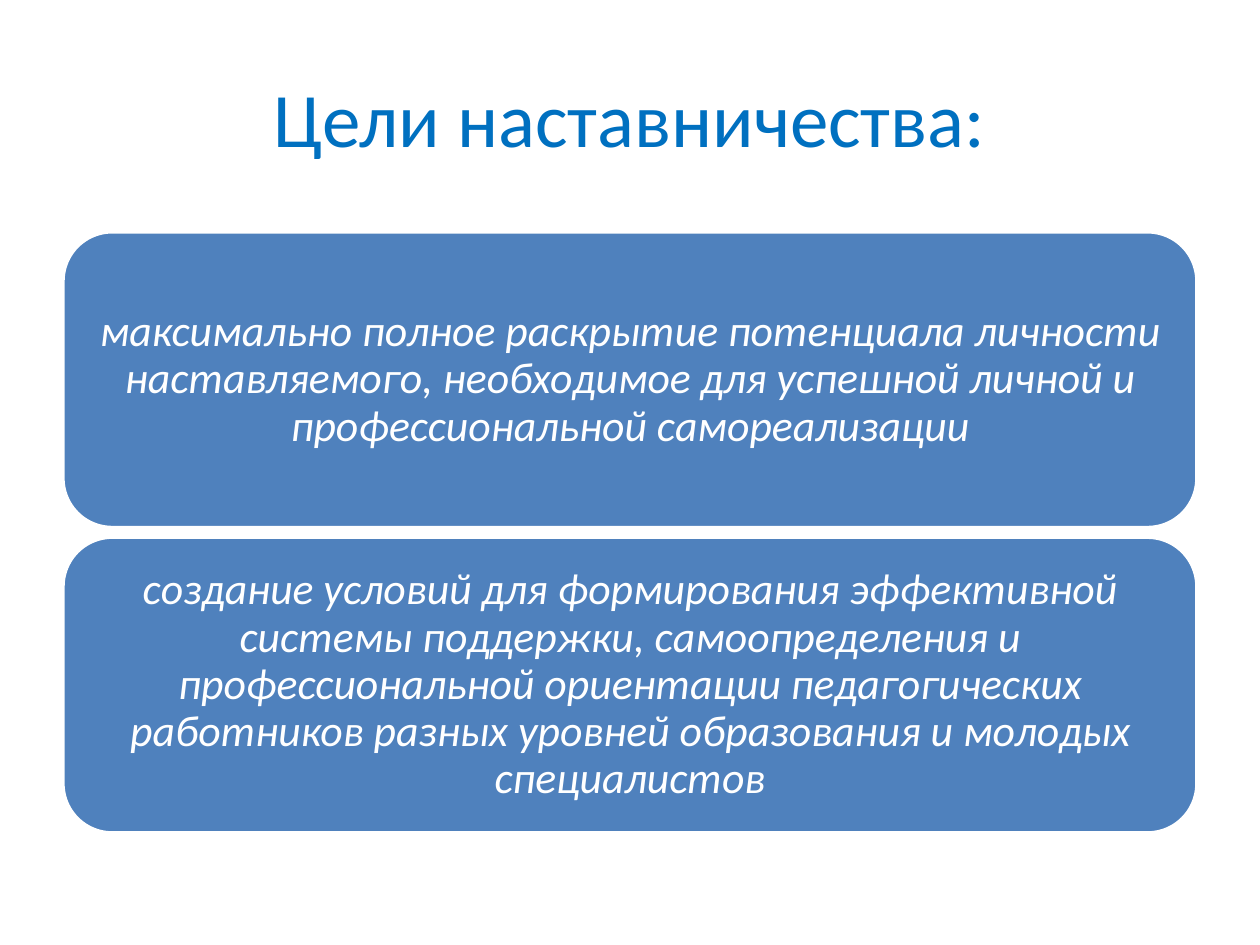
from pptx import Presentation
from pptx.dml.color import RGBColor
from pptx.enum.shapes import MSO_SHAPE
from pptx.enum.text import MSO_ANCHOR, PP_ALIGN
from pptx.util import Pt

COLORS = {"title": "0070C0", "card": "4F81BD", "white": "FFFFFF"}
LEFT, WIDTH = 36, 648


def color(name):
    return RGBColor.from_string(COLORS[name])


def write(frame, text, size, tint):
    frame.word_wrap = True
    frame.vertical_anchor = MSO_ANCHOR.MIDDLE
    para = frame.paragraphs[0]
    para.alignment = PP_ALIGN.CENTER
    run = para.add_run()
    run.text = text
    run.font.name = "Calibri"
    run.font.size = Pt(size)
    run.font.color.rgb = color(tint)
    return para, run


# Slide
deck = Presentation()
deck.slide_width, deck.slide_height = Pt(720), Pt(540)
slide = deck.slides.add_slide(deck.slide_layouts[5])

# Title
title = slide.shapes.title
title.left, title.top = Pt(LEFT), Pt(21.6)
title.width, title.height = Pt(WIDTH), Pt(90)
write(title.text_frame, "Цели наставничества:", 44, "title")

# Goal cards, stacked
goals = [
    "максимально полное раскрытие потенциала личности наставляемого, "
    "необходимое для успешной личной и профессиональной самореализации",
    "создание условий для формирования эффективной системы поддержки, "
    "самоопределения и профессиональной ориентации педагогических "
    "работников разных уровней образования и молодых специалистов",
]
TOP, HEIGHT, GAP = 132.5, 169, 5.5
for i, goal in enumerate(goals):
    card = slide.shapes.add_shape(
        MSO_SHAPE.ROUNDED_RECTANGLE,
        Pt(LEFT), Pt(TOP + i * (HEIGHT + GAP)), Pt(WIDTH), Pt(HEIGHT))
    card.shadow.inherit = False
    card.fill.solid()
    card.fill.fore_color.rgb = color("card")
    card.line.color.rgb = color("white")
    card.line.width = Pt(2)
    frame = card.text_frame
    frame.margin_left = frame.margin_right = Pt(7.2)
    frame.margin_top = frame.margin_bottom = Pt(7.2)
    para, run = write(frame, goal, 25, "white")
    para.line_spacing = 0.9
    para.space_after = Pt(8.75)
    run.font.italic = True

deck.save("out.pptx")
